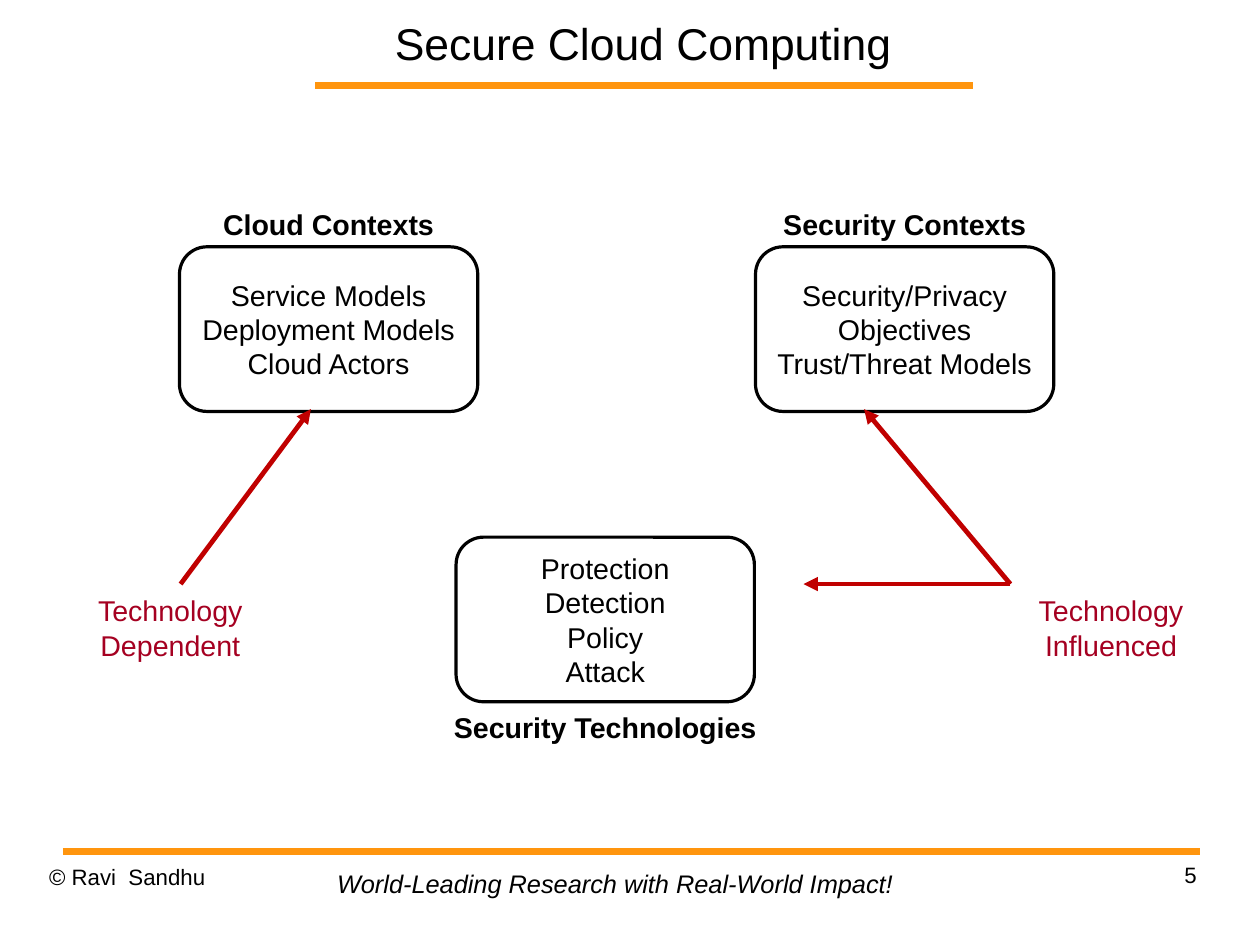
from dataclasses import dataclass

from lxml import etree
from pptx import Presentation
from pptx import util as u
from pptx.dml.color import RGBColor
from pptx.enum import shapes, text
from pptx.oxml import ns


@dataclass(frozen=True)
class Theme:
    font: str = "Arial"
    ink: RGBColor = RGBColor(0, 0, 0)
    paper: RGBColor = RGBColor(255, 255, 255)
    rule: RGBColor = RGBColor(0xFF, 0x95, 0x0E)
    arrow: RGBColor = RGBColor(0xC0, 0, 0)
    note: RGBColor = RGBColor(0xA5, 0, 0x21)
    title: int = 28
    body: int = 18
    motto: int = 16
    footer: int = 14


theme = Theme()
LEFT, CENTER, RIGHT = text.PP_ALIGN.LEFT, text.PP_ALIGN.CENTER, text.PP_ALIGN.RIGHT
TOP, MIDDLE = text.MSO_ANCHOR.TOP, text.MSO_ANCHOR.MIDDLE

cm_per_inch = 2.54
prs = Presentation()
prs.slide_width = u.Inches(28 / cm_per_inch)
prs.slide_height = u.Inches(21 / cm_per_inch)
s = prs.slides.add_slide(prs.slide_layouts[6])


def write(sp, lines, size=theme.body, color=theme.ink, bold=False, italic=False,
          align=CENTER, anchor=TOP, inset=True, wrap=False, spacing=1.0):
    tf = sp.text_frame
    tf.word_wrap = wrap
    tf.vertical_anchor = anchor
    if not inset:
        tf.margin_left = tf.margin_right = tf.margin_top = tf.margin_bottom = 0
    for i, line in enumerate(lines):
        p = tf.add_paragraph() if i else tf.paragraphs[0]
        p.alignment = align
        p.line_spacing = spacing
        r = p.add_run()
        r.text = line
        r.font.name, r.font.size = theme.font, u.Pt(size)
        r.font.bold, r.font.italic = bold, italic
        r.font.color.rgb = color


def connect(start, end, color, width, arrow=False):
    points = [u.Inches(v) for v in (*start, *end)]
    c = s.shapes.add_connector(shapes.MSO_CONNECTOR.STRAIGHT, *points)
    c.line.color.rgb, c.line.width = color, u.Pt(width)
    sp_pr = c._element.spPr
    if arrow:
        etree.SubElement(sp_pr.find(ns.qn("a:ln")), ns.qn("a:tailEnd"), type="triangle")
    etree.SubElement(sp_pr, ns.qn("a:effectLst"))


for left, right, y in [(2.76, 8.51, 0.75), (0.55, 10.5, 7.45)]:
    connect((left, y), (right, y), theme.rule, 4.31)

frame = dict(inset=False, wrap=True)
footer = dict(frame, size=theme.footer, spacing=1.01)
note = dict(color=theme.note)
for at, lines, style in [
    ((7.9, 7.53, 2.57, 0.57), ["5"], dict(footer, align=RIGHT)),
    ((0.43, 7.55, 2.57, 0.57), ["© Ravi  Sandhu"], dict(footer, align=LEFT)),
    ((2.85, 7.55, 5.08, 0.37), ["World-Leading Research with Real-World Impact!"],
     dict(size=theme.motto, italic=True, align=LEFT)),
    ((2.41, 0, 6.43, 0.75), ["Secure Cloud Computing"],
     dict(frame, size=theme.title, anchor=MIDDLE)),
    ((0.75, 5.14, 1.48, 0.71), ["Technology", "Dependent"], note),
    ((8.98, 5.14, 1.48, 0.71), ["Technology", "Influenced"], note),
]:
    write(s.shapes.add_textbox(*map(u.Inches, at)), lines, **style)

box_w, box_h = 2.61, 1.44
for left, top, heading, heading_w, heading_top, lines in [
    (1.57, 2.16, "Cloud Contexts", 2.07, 1.76,
     ["Service Models", "Deployment Models", "Cloud Actors"]),
    (6.61, 2.16, "Security Contexts", 2.35, 1.76,
     ["Security/Privacy", "Objectives", "Trust/Threat Models"]),
    (3.99, 4.7, "Security Technologies", 2.88, 6.16,
     ["Protection", "Detection", "Policy", "Attack"]),
]:
    sp = s.shapes.add_shape(shapes.MSO_SHAPE.ROUNDED_RECTANGLE,
                            *map(u.Inches, (left, top, box_w, box_h)))
    sp.shadow.inherit = False
    sp.fill.solid()
    sp.fill.fore_color.rgb = theme.paper
    sp.line.color.rgb, sp.line.width = theme.ink, u.Pt(2)
    write(sp, lines, anchor=MIDDLE, wrap=True)
    heading_left = left + (box_w - heading_w) / 2
    label = s.shapes.add_textbox(
        *map(u.Inches, (heading_left, heading_top, heading_w, 0.4)))
    write(label, [heading], bold=True)

for start, end in [
    ((1.58, 5.11), (2.72, 3.58)),
    ((8.84, 5.11), (7.56, 3.58)),
    ((8.84, 5.11), (7.03, 5.11)),
]:
    connect(start, end, theme.arrow, 3, arrow=True)

prs.save("out.pptx")
